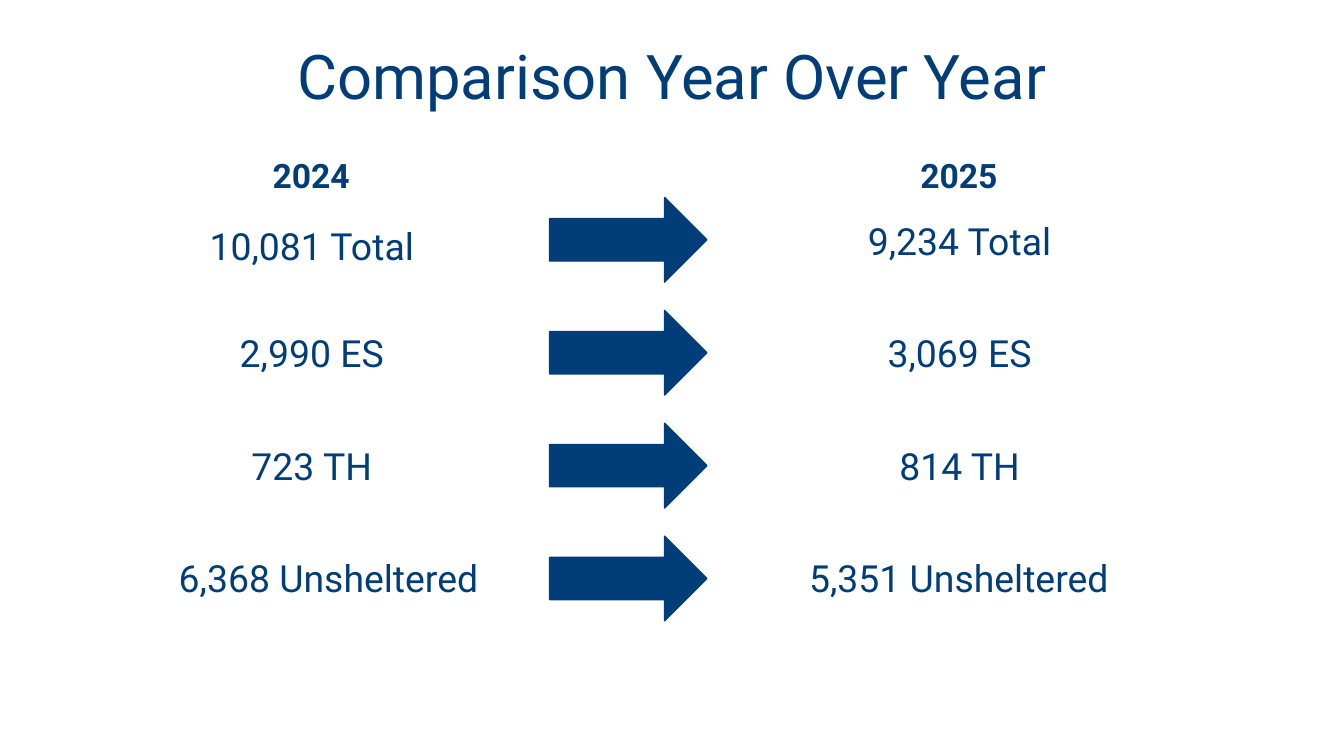
from pptx import Presentation
from pptx.dml.color import RGBColor
from pptx.enum.shapes import MSO_SHAPE
from pptx.enum.text import MSO_ANCHOR, MSO_AUTO_SIZE, PP_ALIGN
from pptx.util import Inches, Pt

NAVY = "003D79"
WHITE = "FFFFFF"
ROW_PITCH = 0.84
TITLE_FONT = {"name": "Roboto", "size": Pt(33), "bold": False}
YEAR_FONT = {"name": "Roboto", "size": Pt(18), "bold": True}
VALUE_FONT = {"name": "Roboto", "size": Pt(20), "bold": False}

YEARS = [("2024", 1.09), ("2025", 5.91)]
COUNTS_2024 = [
    ("10,081 Total", 1.21, 1.56, 2.22),
    ("2,990 ES", 1.21, 2.36, 2.22),
    ("723 TH", 1.21, 3.2, 2.22),
    ("6,368 Unsheltered", 1.22, 4.03, 2.45),
]
COUNTS_2025 = [
    ("9,234 Total", 6.03, 1.52, 2.22),
    ("3,069 ES", 6.03, 2.36, 2.22),
    ("814 TH", 6.03, 3.2, 2.22),
    ("5,351 Unsheltered", 5.91, 4.03, 2.45),
]


def color(value):
    return RGBColor.from_string(value)


def set_attributes(target, values):
    for name, value in values.items():
        setattr(target, name, value)


def write_text(shape, text, font, anchor, margin_x, margin_y):
    frame = shape.text_frame
    frame.text = text
    set_attributes(frame, {
        "word_wrap": True,
        "auto_size": MSO_AUTO_SIZE.NONE,
        "vertical_anchor": anchor,
        "margin_left": Inches(margin_x),
        "margin_right": Inches(margin_x),
        "margin_top": Inches(margin_y),
        "margin_bottom": Inches(margin_y),
    })
    paragraph = frame.paragraphs[0]
    paragraph.alignment = PP_ALIGN.CENTER
    run_font = paragraph.runs[0].font
    set_attributes(run_font, font)
    run_font.color.rgb = color(NAVY)
    return paragraph


def set_title(slide, text):
    title = slide.shapes.title
    set_attributes(title, {
        "left": Inches(0.69),
        "top": Inches(0.05),
        "width": Inches(8.62),
        "height": Inches(1.09),
    })
    paragraph = write_text(title, text, TITLE_FONT, MSO_ANCHOR.MIDDLE, 0.07, 0.04)
    paragraph.line_spacing = 0.9


def add_filled_shape(slide, kind, left, top, width, height, fill):
    shape = slide.shapes.add_shape(
        kind, Inches(left), Inches(top), Inches(width), Inches(height))
    shape.shadow.inherit = False
    shape.fill.solid()
    shape.fill.fore_color.rgb = color(fill)
    return shape


def add_arrow(slide, top):
    arrow = add_filled_shape(
        slide, MSO_SHAPE.RIGHT_ARROW, 4.09, top, 1.17, 0.63, NAVY)
    arrow.line.color.rgb = color(NAVY)
    arrow.line.width = Pt(0.75)


def add_year(slide, text, left):
    box = slide.shapes.add_textbox(
        Inches(left), Inches(1.05), Inches(2.45), Inches(0.5))
    write_text(box, text, YEAR_FONT, MSO_ANCHOR.TOP, 0.1, 0.1)


def add_count(slide, text, left, top, width):
    box = add_filled_shape(
        slide, MSO_SHAPE.RECTANGLE, left, top, width, 0.54, WHITE)
    box.line.fill.background()
    write_text(box, text, VALUE_FONT, MSO_ANCHOR.TOP, 0.1, 0.1)


def main():
    presentation = Presentation()
    presentation.slide_width = Inches(10)
    presentation.slide_height = Inches(10 * 9 / 16)
    slide = presentation.slides.add_slide(presentation.slide_layouts[5])
    slide.background.fill.solid()
    slide.background.fill.fore_color.rgb = color(WHITE)

    set_title(slide, "Comparison Year Over Year")
    for row in range(len(COUNTS_2024)):
        add_arrow(slide, 1.47 + row * ROW_PITCH)
    for year, left in YEARS:
        add_year(slide, year, left)
    for count in COUNTS_2024 + COUNTS_2025:
        add_count(slide, *count)
    presentation.save("out.pptx")


if __name__ == "__main__":
    main()
